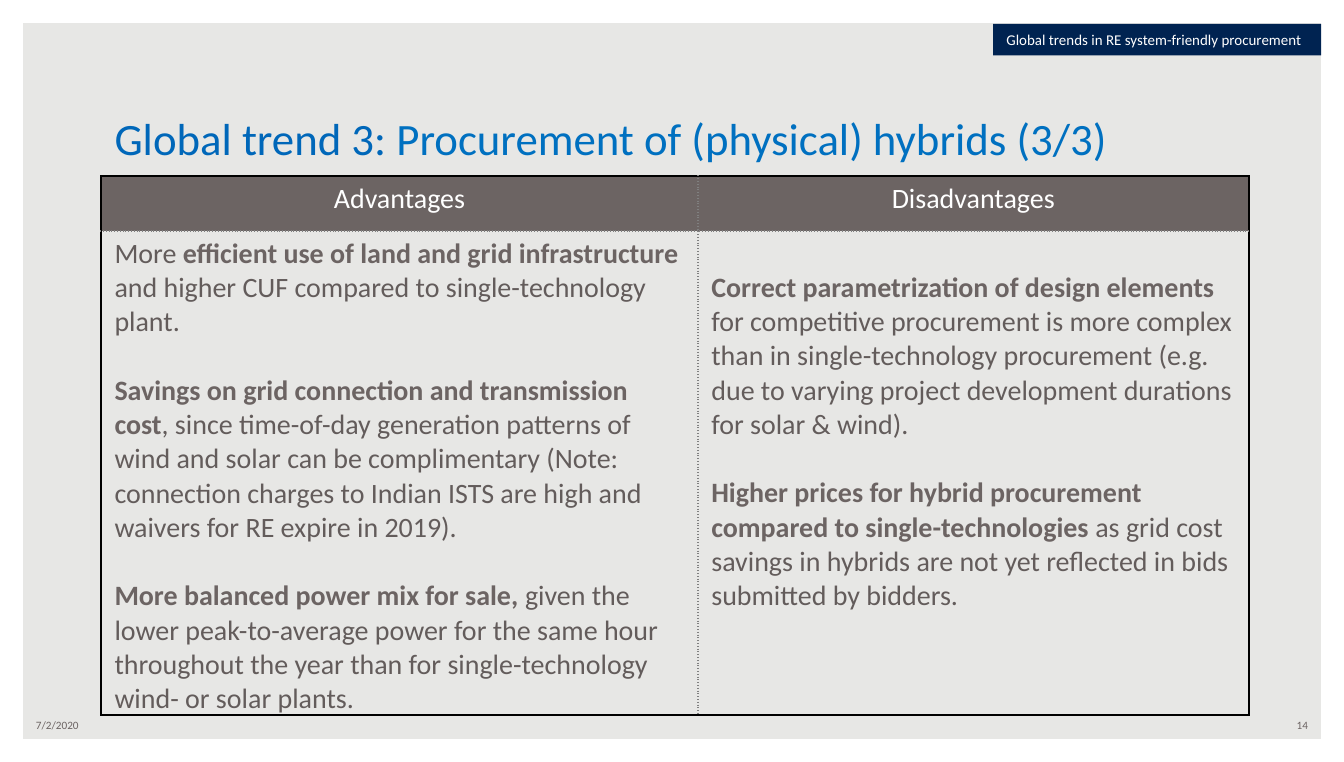
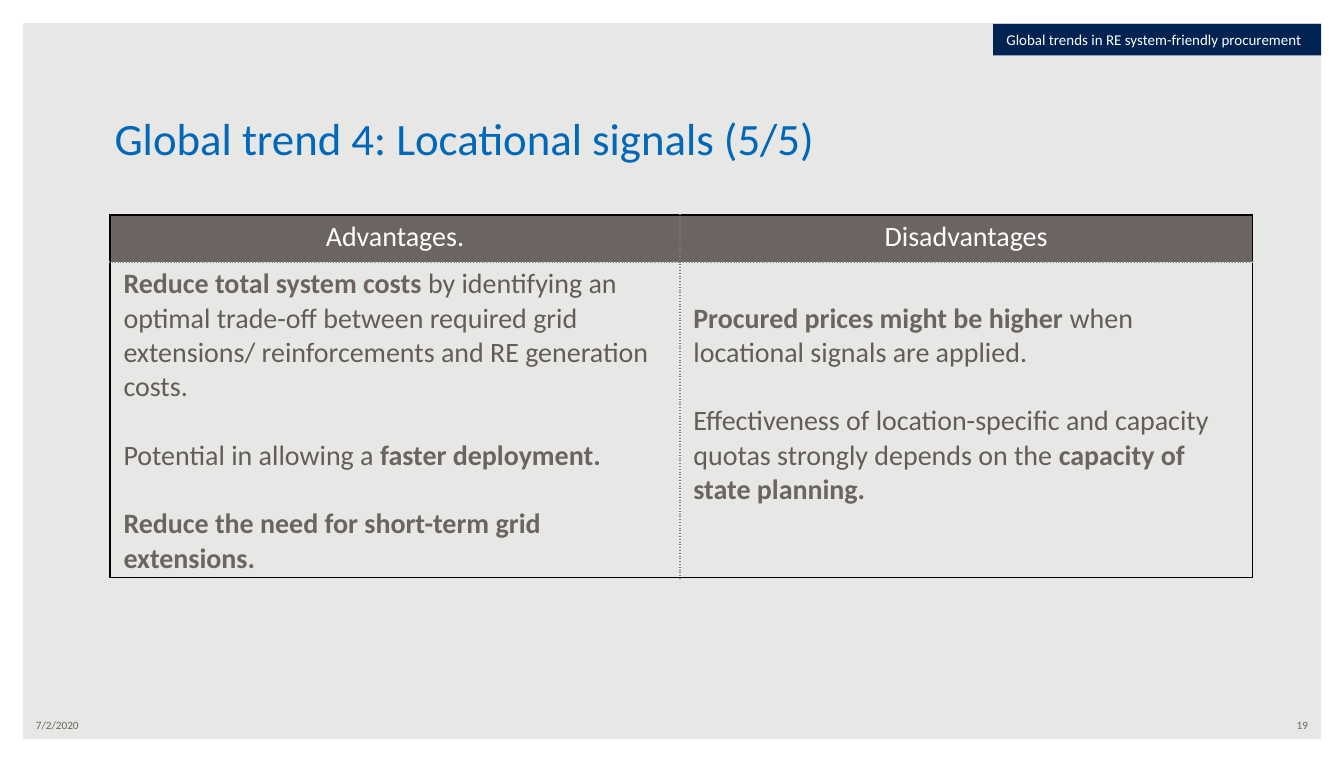
from lxml.etree import SubElement
from pptx import Presentation
from pptx.dml.color import RGBColor
from pptx.enum.shapes import MSO_SHAPE
from pptx.enum.text import MSO_ANCHOR, MSO_AUTO_SIZE, PP_ALIGN
from pptx.oxml.ns import qn
from pptx.util import Cm, Pt

COLORS = {
    "background": "E7E7E5",
    "white": "FFFFFF",
    "navy": "002351",
    "title": "0067B9",
    "title_alt": "0070C0",
    "strong": "6C6463",
    "text": "635C5B",
    "outline": "000000",
    "divider": "808080",
}
FONT = "Calibri"
LINE = 18.3

SLIDES = [
    {
        "number": "14",
        "title": [("Global trend 3: ", "title"),
                  ("Procurement of (physical) hybrids (3/3)", "title_alt")],
        "at": (1.91, 3.33),
        "cols": (11.28, 10.41),
        "rows": (1.04, 9.14),
        "heads": ("Advantages", "Disadvantages"),
        "lists": (
            ["More *efficient use of land and grid infrastructure *and higher CUF "
             "compared to single-technology plant.",
             "*Savings on grid connection and transmission cost*, since time-of-day "
             "generation patterns of wind and solar can be complimentary (Note: "
             "connection charges to Indian ISTS are high and waivers for RE expire in 2019).",
             "*More balanced power mix for sale, *given the lower peak-to-average power "
             "for the same hour throughout the year than for single-technology wind- or "
             "solar plants."],
            ["*Correct parametrization of design elements* for competitive procurement is "
             "more complex than in single-technology procurement (e.g. due to varying "
             "project development durations for solar & wind).",
             "*Higher prices for hybrid procurement compared to single-technologies *as "
             "grid cost savings in hybrids are not yet reflected in bids submitted by "
             "bidders."],
        ),
    },
    {
        "number": "19",
        "title": [("Global trend 4: Locational signals (5/5)", "title")],
        "at": (2.08, 4.06),
        "cols": (10.77, 10.82),
        "rows": (0.89, 5.96),
        "heads": ("Advantages.", "Disadvantages"),
        "lists": (
            ["*Reduce total system costs *by identifying an optimal trade-off between "
             "required grid extensions/ reinforcements and RE generation costs.",
             "Potential in allowing a *faster deployment.*",
             "*Reduce the need for short-term grid extensions.*"],
            ["*Procured prices might be higher *when locational signals are applied.",
             "Effectiveness of location-specific and capacity quotas strongly depends on "
             "the *capacity of state planning.*"],
        ),
    },
]


def set_font(font, size, color):
    font.name = FONT
    font.size = Pt(size)
    font.color.rgb = RGBColor.from_string(COLORS[color])


def add_border(cell, side, outer):
    ln = SubElement(cell._tc.get_or_add_tcPr(), qn(f"a:ln{side}"), w=str(Pt(1)))
    fill = SubElement(ln, qn("a:solidFill"))
    SubElement(fill, qn("a:srgbClr"), val=COLORS["outline" if outer else "divider"])
    SubElement(ln, qn("a:prstDash"), val="solid" if outer else "sysDot")


prs = Presentation()
prs.slide_width = Cm(25.4)
prs.slide_height = Cm(14.4)

for data in SLIDES:
    s = prs.slides.add_slide(prs.slide_layouts[5])
    s.background.fill.solid()
    s.background.fill.fore_color.rgb = RGBColor.from_string(COLORS["background"])

    frame = s.shapes.add_shape(MSO_SHAPE.FRAME, 0, 0, prs.slide_width, prs.slide_height)
    frame.adjustments[0] = 0.03
    tag = s.shapes.add_shape(MSO_SHAPE.RECTANGLE, Cm(18.77), Cm(0.45), Cm(6.2), Cm(0.6))
    for sp, color in ((frame, "white"), (tag, "navy")):
        sp.shadow.inherit = False
        sp.fill.solid()
        sp.fill.fore_color.rgb = RGBColor.from_string(COLORS[color])
        sp.line.fill.background()

    tf = tag.text_frame
    tf.margin_right = tf.margin_top = tf.margin_bottom = 0
    tf.vertical_anchor = MSO_ANCHOR.MIDDLE
    p = tf.paragraphs[0]
    p.text = "Global trends in RE system-friendly procurement"
    p.alignment = PP_ALIGN.LEFT
    set_font(p.font, 8, "white")

    for text, left, align in (("7/2/2020", 0.43, PP_ALIGN.LEFT),
                              (data["number"], 19.05, PP_ALIGN.RIGHT)):
        tf = s.shapes.add_textbox(Cm(left), Cm(13.46), Cm(5.92), Cm(0.5)).text_frame
        tf.word_wrap = True
        tf.vertical_anchor = MSO_ANCHOR.MIDDLE
        p = tf.paragraphs[0]
        p.text = text
        p.alignment = align
        set_font(p.font, 6, "strong")

    title = s.shapes.title
    title.left, title.top, title.width, title.height = Cm(1.91), Cm(1.91), Cm(21.59), Cm(1.27)
    tf = title.text_frame
    tf.auto_size = MSO_AUTO_SIZE.NONE
    tf.vertical_anchor = MSO_ANCHOR.BOTTOM
    tf.margin_bottom = Cm(0.08)
    p = tf.paragraphs[0]
    p.alignment = PP_ALIGN.LEFT
    for text, color in data["title"]:
        r = p.add_run()
        r.text = text
        set_font(r.font, 24, color)

    left, top = data["at"]
    table = s.shapes.add_table(2, 2, Cm(left), Cm(top), Cm(sum(data["cols"])),
                               Cm(sum(data["rows"]))).table
    table.first_row = table.horz_banding = False
    for i in range(2):
        table.columns[i].width = Cm(data["cols"][i])
        table.rows[i].height = Cm(data["rows"][i])

    for col in range(2):
        head, body = table.cell(0, col), table.cell(1, col)
        for row, cell in enumerate((head, body)):
            for side, outer in (("L", col == 0), ("R", col == 1),
                                ("T", row == 0), ("B", row == 1)):
                add_border(cell, side, outer)
            cell.margin_top = Cm(0.1)
            cell.margin_bottom = 0

        head.fill.solid()
        head.fill.fore_color.rgb = RGBColor.from_string(COLORS["strong"])
        p = head.text_frame.paragraphs[0]
        p.text = data["heads"][col]
        p.alignment = PP_ALIGN.CENTER
        set_font(p.font, 15, "white")

        body.fill.background()
        body.margin_top = Cm(0.1) + Pt(LINE) * col
        tf = body.text_frame
        for i, text in enumerate(data["lists"][col]):
            p = tf.add_paragraph() if i else tf.paragraphs[0]
            if i:
                p.space_before = Pt(LINE)
            for j, part in enumerate(text.split("*")):
                if part:
                    r = p.add_run()
                    r.text = part
                    r.font.bold = j % 2 == 1
                    set_font(r.font, 15, "strong" if j % 2 else "text")

prs.save("out.pptx")
